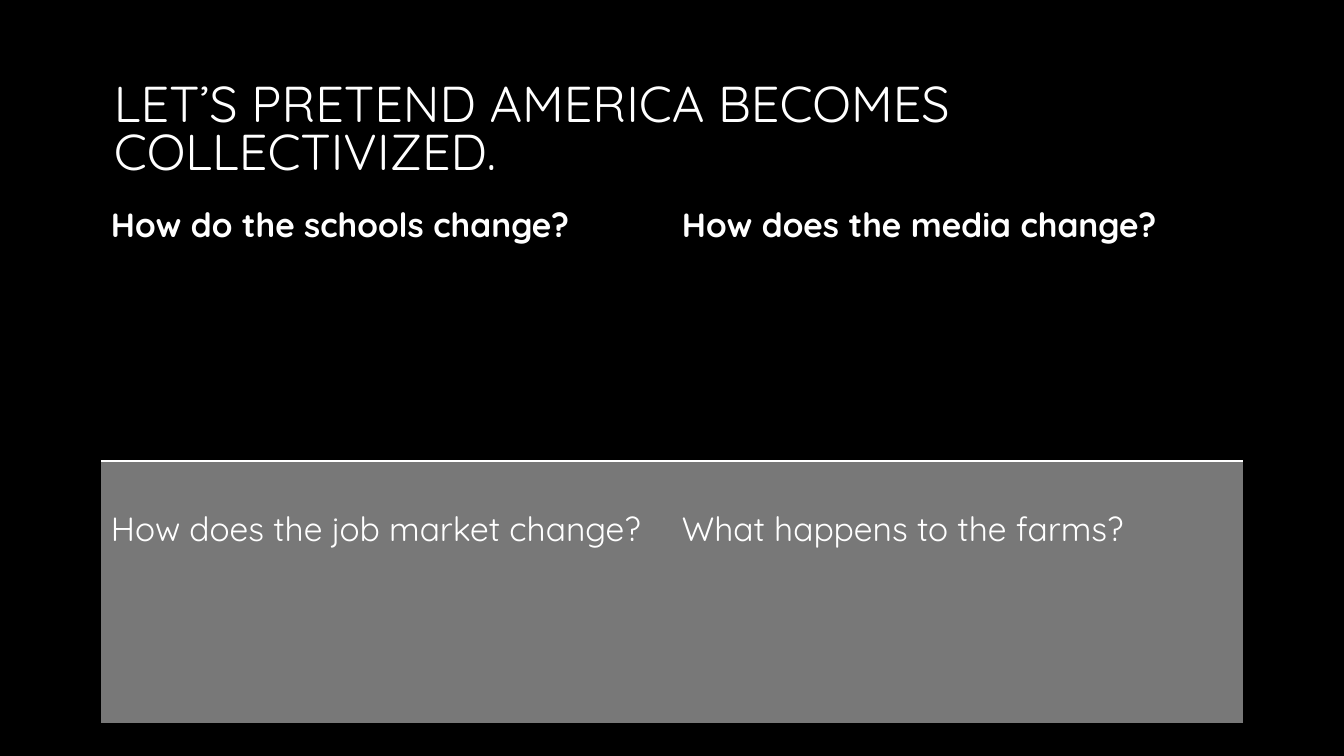
import pptx
import pptx.util
import pptx.dml.color
import pptx.enum.text
import pptx.oxml
import pptx.oxml.ns

Cm = pptx.util.Cm
Pt = pptx.util.Pt

FONT = "Quicksand"
WHITE = "FFFFFF"
BLACK = "000000"
GREY = "787878"
NO_STYLE = "{2D5ABB26-0587-4C30-8999-92F81FD0307C}"

TITLE = "LET’S PRETEND AMERICA BECOMES COLLECTIVIZED."
QUESTIONS = [
    ["How do the schools change?", "How does the media change?"],
    ["How does the job market change?", "What happens to the farms?"],
]


def color(value):
    return pptx.dml.color.RGBColor.from_string(value)


def style_text(p, size, bold=False):
    for r in p.runs:
        r.font.name = FONT
        r.font.size = Pt(size)
        r.font.bold = bold
        r.font.color.rgb = color(WHITE)


def add_bottom_border(cell, value, width):
    ln = pptx.oxml.parse_xml(
        f'<a:lnB {pptx.oxml.ns.nsdecls("a")} w="{Pt(width)}">'
        f'<a:solidFill><a:srgbClr val="{value}"/></a:solidFill></a:lnB>'
    )
    cell._tc.get_or_add_tcPr().insert(0, ln)


def add_title(s, left, top, width, height):
    tf = s.shapes.add_textbox(left, top, width, height).text_frame
    tf.word_wrap = True
    tf.vertical_anchor = pptx.enum.text.MSO_ANCHOR.BOTTOM
    tf.margin_left = tf.margin_right = Cm(0.33)
    tf.margin_top = tf.margin_bottom = Cm(0.18)
    p = tf.paragraphs[0]
    p.text = TITLE
    p.line_spacing = 0.8
    style_text(p, 36)


def add_questions(s, left, top, width, height):
    rows, cols = len(QUESTIONS), len(QUESTIONS[0])
    table = s.shapes.add_table(rows, cols, left, top, width, height).table
    table._tbl.tblPr.find(pptx.oxml.ns.qn("a:tableStyleId")).text = NO_STYLE
    for i, questions in enumerate(QUESTIONS):
        header = i == 0
        for j, question in enumerate(questions):
            cell = table.cell(i, j)
            cell.fill.solid()
            cell.fill.fore_color.rgb = color(BLACK if header else GREY)
            cell.margin_top = Cm(0.13 if header else 1.18)
            p = cell.text_frame.paragraphs[0]
            p.text = question
            style_text(p, 24, bold=header)
            if header:
                add_bottom_border(cell, WHITE, 2)


def main():
    prs = pptx.Presentation()
    prs.slide_width = Cm(33.87)
    prs.slide_height = Cm(19.05)
    s = prs.slides.add_slide(prs.slide_layouts[6])
    s.background.fill.solid()
    s.background.fill.fore_color.rgb = color(BLACK)

    left, width = Cm(2.54), Cm(28.78)
    add_title(s, left, Cm(1.35), width, Cm(3.38))
    add_questions(s, left, Cm(5), width, Cm(13.22))
    prs.save("out.pptx")


if __name__ == "__main__":
    main()
